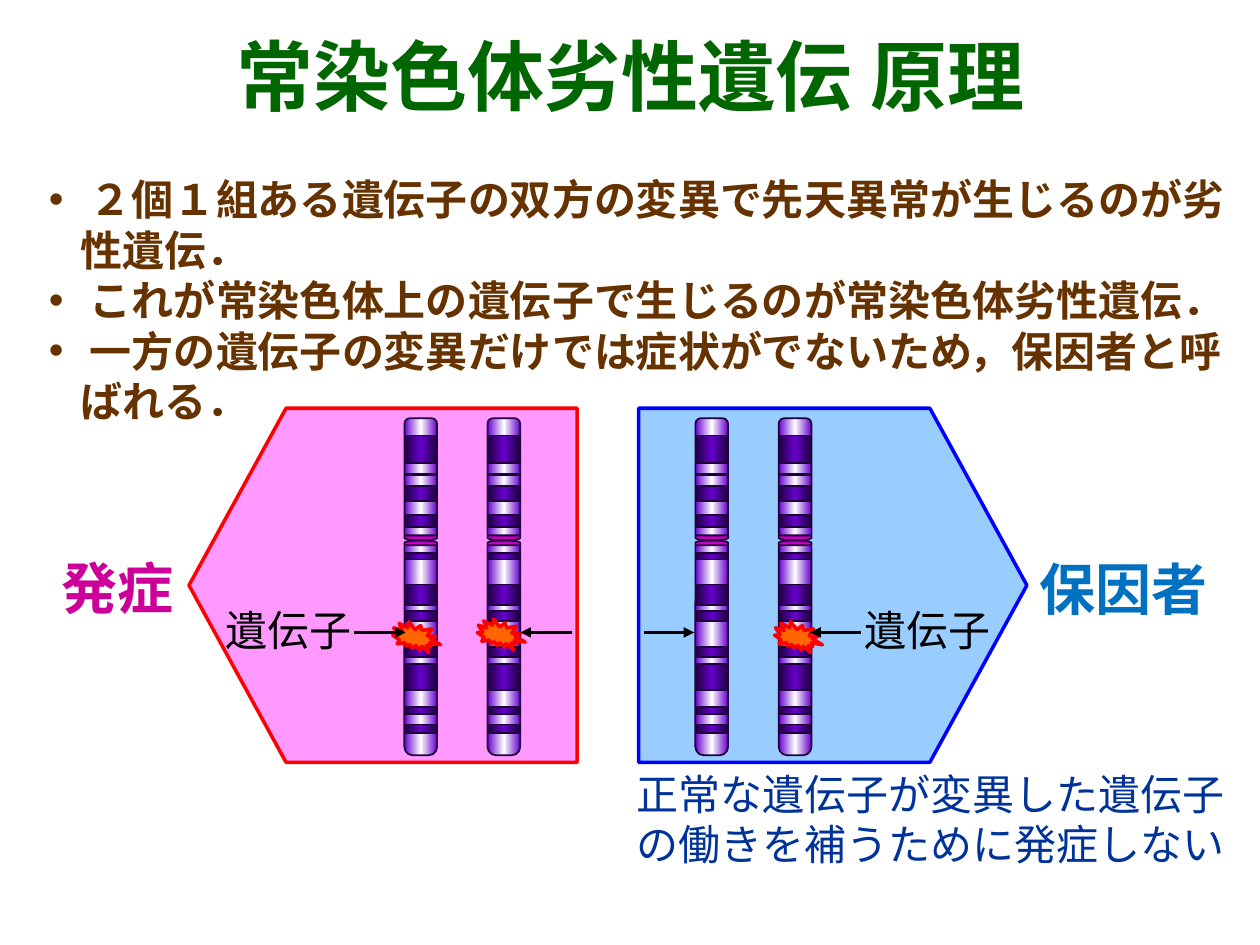
from lxml.etree import SubElement
from pptx import Presentation
from pptx.dml.color import RGBColor
from pptx.enum.shapes import MSO_CONNECTOR, MSO_SHAPE
from pptx.enum.text import MSO_ANCHOR, PP_ALIGN
from pptx.oxml.ns import qn
from pptx.util import Pt

COLORS = {
    "title": "006600", "body": "663300", "affected": "CC0099",
    "carrier": "0070C0", "note": "003399", "black": "000000",
    "pink": "FF99FF", "red": "FF0000", "sky": "99CCFF", "blue": "0000FF",
    "orange": "FF6600", "outline": "1E003C", "purple": "6600CC",
    "white": "FFFFFF", "plum": "660066", "magenta": "CC00CC",
}
CJK = "Noto Sans CJK JP"
TITLE = "常染色体劣性遺伝 原理"
POINTS = [
    " ２個１組ある遺伝子の双方の変異で先天異常が生じるのが劣性遺伝．",
    " これが常染色体上の遺伝子で生じるのが常染色体劣性遺伝．",
    " 一方の遺伝子の変異だけでは症状がでないため，保因者と呼ばれる．",
]
NOTE = ["正常な遺伝子が変異した遺伝子", "の働きを補うために発症しない"]

# Gradients: edge colour, middle colour
LIGHT, DARK, WAIST = ("purple", "white"), ("outline", "purple"), ("plum", "magenta")
# Chromosome parts: top, height
ARMS = [(239, 69, 0.167), (308.2, 123.4, 0.26)]  # with corner rounding
LIGHT_BANDS = [(311, 6.5), (299.5, 6.5)]
DARK_BANDS = [
    (294.2, 7.2), (316.1, 3.6), (334.1, 11.5), (277.9, 8.6), (270.7, 0.7),
    (248.8, 15.8), (349.2, 5.8), (369.8, 5.8), (379.4, 15.1), (403.9, 4.3),
    (414, 5),
]
CENTROMERE = [(307.4, 90), (310.2, 270)]  # centre, rotation
CHROMOSOME_W = 18.7
PLATE_TOP, PLATE_W, PLATE_H = 233.3, 221.8, 202.3
ARROW_Y = 361.4

# Each panel: plate, chromosome lefts, mutations, arrows (from, to), gene label
PANELS = [
    dict(left=365, turn=0, fill="sky", line="blue", chromosomes=[397.4, 445],
         mutations=[(442.1, 355.7)], arrows=[(367.9, 396.7), (491.8, 463)],
         label=486.7),
    dict(left=108, turn=180, fill="pink", line="red", chromosomes=[278.6, 231.1],
         mutations=[(272.2, 354.2), (223.9, 355.7)],
         arrows=[(326.9, 297.4), (202.3, 231.8)], label=121.7),
]

prs = Presentation()
prs.slide_width, prs.slide_height = Pt(720), Pt(540)
s = prs.slides.add_slide(prs.slide_layouts[6])


def rgb(name):
    return RGBColor.from_string(COLORS[name])


def text(lines, x, y, w, h, size=24, color="black", font="Arial", bold=False,
         wrap=True, align=PP_ALIGN.LEFT, anchor=MSO_ANCHOR.TOP, bullet=False):
    tf = s.shapes.add_textbox(Pt(x), Pt(y), Pt(w), Pt(h)).text_frame
    tf.word_wrap, tf.vertical_anchor = wrap, anchor
    for i, line in enumerate(lines):
        p = tf.add_paragraph() if i else tf.paragraphs[0]
        p.alignment = align
        r = p.add_run()
        r.text = line
        r.font.size, r.font.bold, r.font.name = Pt(size), bold, font
        r.font.color.rgb = rgb(color)
        SubElement(r._r.get_or_add_rPr(), qn("a:ea"), typeface=font)
        if bullet:
            pPr = p._p.get_or_add_pPr()
            pPr.set("marL", str(Pt(18)))
            pPr.set("indent", str(-Pt(18)))
            SubElement(pPr, qn("a:buFont"), typeface="Arial")
            SubElement(pPr, qn("a:buChar"), char="•")


def shape(kind, x, y, w, h, fill, line, width, rotation=0, adjust=None,
          parent=s.shapes):
    """Add a preset shape; a pair as fill makes an edge-middle-edge gradient."""
    sp = parent.add_shape(kind, Pt(x), Pt(y), Pt(w), Pt(h))
    sp.shadow.inherit = False
    sp.rotation = rotation
    if adjust is not None:
        sp.adjustments[0] = adjust
    if isinstance(fill, tuple):
        sp.fill.gradient()
        sp.fill.gradient_angle = 0
        stops = sp.fill._fill._gradFill.find(qn("a:gsLst"))
        for old in list(stops):
            stops.remove(old)
        for pos, name in zip((0, 50, 100), (*fill, fill[0])):
            gs = SubElement(stops, qn("a:gs"), pos=str(pos * 1000))
            SubElement(gs, qn("a:srgbClr"), val=COLORS[name])
    else:
        sp.fill.solid()
        sp.fill.fore_color.rgb = rgb(fill)
    sp.line.color.rgb = rgb(line)
    sp.line.width = Pt(width)


def chromosome(x):
    group = s.shapes.add_group_shape().shapes

    def part(kind, top, h, fill, left=x, w=CHROMOSOME_W, **kw):
        shape(kind, left, top, w, h, fill, "outline", 1, parent=group, **kw)

    for top, h, rounding in ARMS:
        part(MSO_SHAPE.ROUNDED_RECTANGLE, top, h, LIGHT, adjust=rounding)
    for bands, fill in ((LIGHT_BANDS, LIGHT), (DARK_BANDS, DARK)):
        for top, h in bands:
            part(MSO_SHAPE.RECTANGLE, top, h, fill)
    thick = 2.9
    for centre, rotation in CENTROMERE:
        part(MSO_SHAPE.FLOWCHART_DELAY, centre - CHROMOSOME_W / 2, CHROMOSOME_W,
             WAIST, left=x + (CHROMOSOME_W - thick) / 2, w=thick,
             rotation=rotation)


def arrow(x1, x2, y):
    c = s.shapes.add_connector(MSO_CONNECTOR.STRAIGHT, Pt(x1), Pt(y), Pt(x2), Pt(y))
    c.line.color.rgb = rgb("black")
    c.line.width = Pt(2)
    SubElement(c.line._get_or_add_ln(), qn("a:tailEnd"), type="triangle")
    SubElement(c._element.spPr, qn("a:effectLst"))


text(POINTS, 20.9, 95.8, 692.6, 151.2, color="body", font=CJK, bold=True,
     anchor=MSO_ANCHOR.MIDDLE, bullet=True)
text(["発症"], 28.1, 312.5, 82.1, 45.4, size=32, color="affected", bold=True)

for panel in PANELS:
    shape(MSO_SHAPE.PENTAGON, panel["left"], PLATE_TOP, PLATE_W, PLATE_H,
          panel["fill"], panel["line"], 2, rotation=panel["turn"], adjust=0.274)
    for x in panel["chromosomes"]:
        chromosome(x)
    text(["遺伝子"], panel["label"], 342, 86.4, 36, wrap=False)
    for x, y in panel["mutations"]:
        shape(MSO_SHAPE.EXPLOSION2, x, y, 28.1, 17.3, "orange", "red", 2, rotation=30)
    for x1, x2 in panel["arrows"]:
        arrow(x1, x2, ARROW_Y)

text(["保因者"], 586.8, 313.2, 115.2, 45.4, size=32, color="carrier", bold=True)
text(NOTE, 356.4, 435.6, 350.6, 64.8, color="note", wrap=False)
text([TITLE], 20.2, 14.4, 680.4, 56.9, size=44, color="title", font=CJK,
     bold=True, align=PP_ALIGN.CENTER, anchor=MSO_ANCHOR.MIDDLE)

prs.save("out.pptx")
